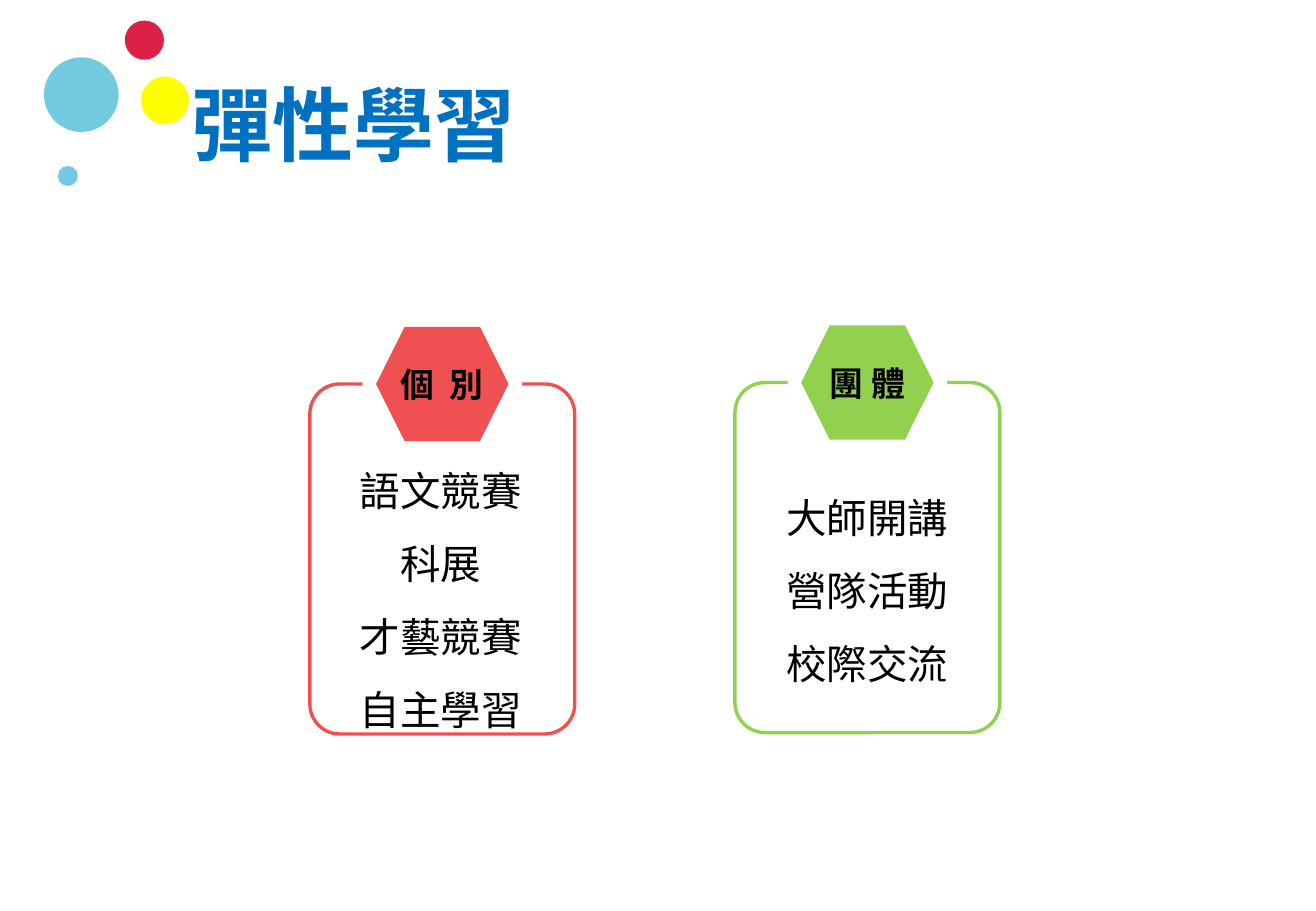
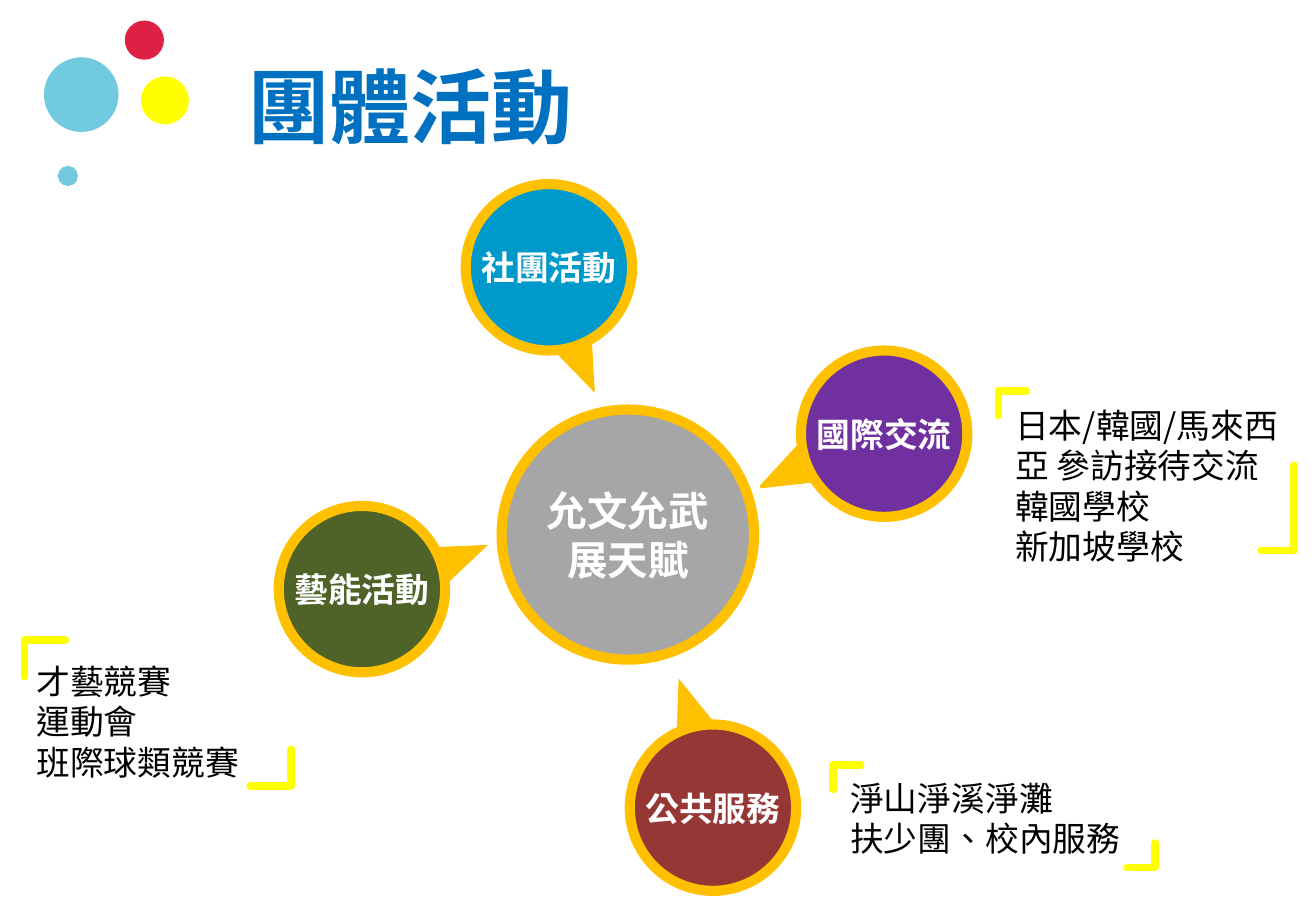
from dataclasses import dataclass
from math import cos, radians, sin

from lxml.etree import SubElement
from pptx import Presentation
from pptx.dml.color import RGBColor
from pptx.enum.shapes import MSO_SHAPE
from pptx.enum.text import MSO_ANCHOR, PP_ALIGN
from pptx.oxml.ns import qn
from pptx.util import Cm, Pt


@dataclass(frozen=True)
class Theme:
    font: str = "Noto Sans CJK SC"
    title: str = "0070C0"
    text: str = "000000"
    white: str = "FFFFFF"
    sky: str = "71CAE0"
    crimson: str = "DC2144"
    yellow: str = "FFFF00"
    red: str = "F05051"
    green: str = "92D050"
    amber: str = "FFC000"
    gray: str = "A6A6A6"
    olive: str = "4F6228"
    blue: str = "0099CC"
    purple: str = "7030A0"
    maroon: str = "953735"
    title_size: int = 48
    large_size: int = 24
    label_size: int = 20


T = Theme()


def add_shape(slide, kind, box, fill, line=None, line_width=2):
    sp = slide.shapes.add_shape(kind, *map(Cm, box))
    sp.shadow.inherit = False
    sp.fill.solid()
    sp.fill.fore_color.rgb = RGBColor.from_string(fill)
    if line:
        sp.line.color.rgb = RGBColor.from_string(line)
        sp.line.width = Pt(line_width)
    else:
        sp.line.fill.background()
    return sp


def add_centred(slide, kind, centre, size, fill, line=None, line_width=2):
    """Place a shape by its centre instead of its corner."""
    (x, y), (w, h) = centre, size
    return add_shape(slide, kind, (x - w / 2, y - h / 2, w, h), fill, line, line_width)


def write(sp, text, size, color, bold=False, align=PP_ALIGN.CENTER,
          line_spacing=None, tracking=0):
    """Fill a shape with one paragraph per line; tracking is in points."""
    tf = sp.text_frame
    tf.text = text
    for p in tf.paragraphs:
        p.alignment = align
        p.line_spacing = line_spacing
        for r in p.runs:
            r.font.name, r.font.size, r.font.bold = T.font, Pt(size), bold
            r.font.color.rgb = RGBColor.from_string(color)
            rPr = r.font._element
            rPr.set("lang", "zh-TW")
            if tracking:
                rPr.set("spc", str(round(tracking * 100)))
            SubElement(rPr, qn("a:ea")).set("typeface", T.font)


def add_label(sp, text, size, color, tracking=0):
    """Write a bold, unwrapped label in the middle of a shape."""
    sp.text_frame.word_wrap = False
    sp.text_frame.vertical_anchor = MSO_ANCHOR.MIDDLE
    write(sp, text, size, color, bold=True, tracking=tracking)


def add_text(slide, box, text, size, color=T.text, **style):
    tb = slide.shapes.add_textbox(*map(Cm, box))
    tb.text_frame.word_wrap = True
    write(tb, text, size, color, **style)
    return tb


def add_slide(prs, title, title_box):
    """Add a blank slide with the corner dots and the title."""
    slide = prs.slides.add_slide(prs.slide_layouts[6])
    for x, y, diameter, color in (
        (3.45, 2.1, 1, T.yellow),
        (3.02, 0.84, 0.82, T.crimson),
        (1.42, 3.68, 0.42, T.sky),
        (1.7, 1.98, 1.56, T.sky),
    ):
        add_centred(slide, MSO_SHAPE.OVAL, (x, y), (diameter, diameter), color)
    tb = add_text(slide, title_box, title, T.title_size, T.title, bold=True,
                  align=PP_ALIGN.LEFT, line_spacing=0.9)
    tf = tb.text_frame
    tf.vertical_anchor = MSO_ANCHOR.MIDDLE
    tf.margin_left = tf.margin_right = Cm(0.3)
    tf.margin_top = tf.margin_bottom = Cm(0.15)
    return slide


def add_card(slide, left, top, color, heading, items, list_box, tracking=0):
    """Add an outlined card whose heading hexagon breaks its top edge."""
    width, height = 5.54, 7.32
    card = add_shape(slide, MSO_SHAPE.ROUNDED_RECTANGLE,
                     (left, top, width, height), T.white, color)
    card.adjustments[0] = 0.113
    badge = (left + width / 2, top)
    add_centred(slide, MSO_SHAPE.HEXAGON, badge, (3.35, 2.9), T.white)
    hexagon = add_centred(slide, MSO_SHAPE.HEXAGON, badge, (2.77, 2.39), color)
    add_text(slide, list_box, items, T.large_size, line_spacing=1.5)
    add_label(hexagon, heading, T.label_size, T.text, tracking)


def add_bubble(slide, x, y, color, text, angle, outline=None):
    """Add a ringed circle with a pointer, angle clockwise from straight up."""
    diameter, reach, lean = 3.48, 2.26, 4.5
    circle = add_centred(slide, MSO_SHAPE.OVAL, (x, y), (diameter, diameter),
                         color, T.amber, 6)
    add_label(circle, text, T.label_size, T.white)
    bearing = radians(angle + lean)
    tip = (x + reach * sin(bearing), y - reach * cos(bearing))
    pointer = add_centred(slide, MSO_SHAPE.ISOSCELES_TRIANGLE, tip, (0.8, 1.07),
                          T.amber, outline)
    pointer.rotation = angle


def add_note(slide, box, text, opening, closing):
    """Add a left-aligned note between two corner brackets."""
    add_text(slide, box, text, T.label_size, align=PP_ALIGN.LEFT)
    for corner, rotation in ((opening, 0), (closing, 180)):
        sp = add_shape(slide, MSO_SHAPE.HALF_FRAME, corner, T.yellow, T.yellow, 4.5)
        sp.adjustments[0] = sp.adjustments[1] = 0
        sp.rotation = rotation


def build_flexible_learning(prs):
    slide = add_slide(prs, "彈性學習", (3.71, 1.12, 18.67, 3.18))
    add_card(slide, 6.48, 8.03, T.red, "個 別",
             "語文競賽\n科展\n才藝競賽\n自主學習", (6.68, 9.12, 5.08, 6.4), tracking=2.2)
    add_card(slide, 15.37, 8, T.green, "團 體",
             "大師開講\n營隊活動\n校際交流", (16.08, 9.68, 4.11, 4.88))


def build_group_activities(prs):
    slide = add_slide(prs, "團體活動", (4.9, 0.74, 10.01, 3.18))
    hub = add_centred(slide, MSO_SHAPE.OVAL, (13.13, 11.18), (5.28, 5.23),
                      T.gray, T.amber, 6)
    add_label(hub, "允文允武\n展天賦", T.large_size, T.white)

    for bubble in (
        (7.57, 12.32, T.olive, "藝能活動", 67),
        (11.48, 5.59, T.blue, "社團活動", 156.3),
        (18.49, 9.07, T.purple, "國際交流", 243.1, T.amber),
        (14.91, 16.89, T.maroon, "公共服務", 341.5),
    ):
        add_bubble(slide, *bubble)

    add_note(slide, (20.98, 8.33, 6.17, 3.68),
             "日本/韓國/馬來西亞 參訪接待交流\n韓國學校\n新加坡學校",
             (20.88, 8.18, 0.58, 0.51), (26.37, 9.73, 0.69, 1.78))
    add_note(slide, (0.51, 13.69, 8.86, 2.82), "才藝競賽\n運動會\n班際球類競賽",
             (0.51, 13.39, 0.86, 0.76), (5.23, 15.67, 0.86, 0.76))
    add_note(slide, (17.53, 16.13, 7.04, 1.96), "淨山淨溪淨灘\n扶少團、校內服務",
             (17.42, 16, 0.58, 0.51), (23.57, 17.63, 0.58, 0.51))


def main():
    prs = Presentation()
    prs.slide_width, prs.slide_height = Cm(27.52), Cm(19.05)
    build_flexible_learning(prs)
    build_group_activities(prs)
    prs.save("out.pptx")


if __name__ == "__main__":
    main()
